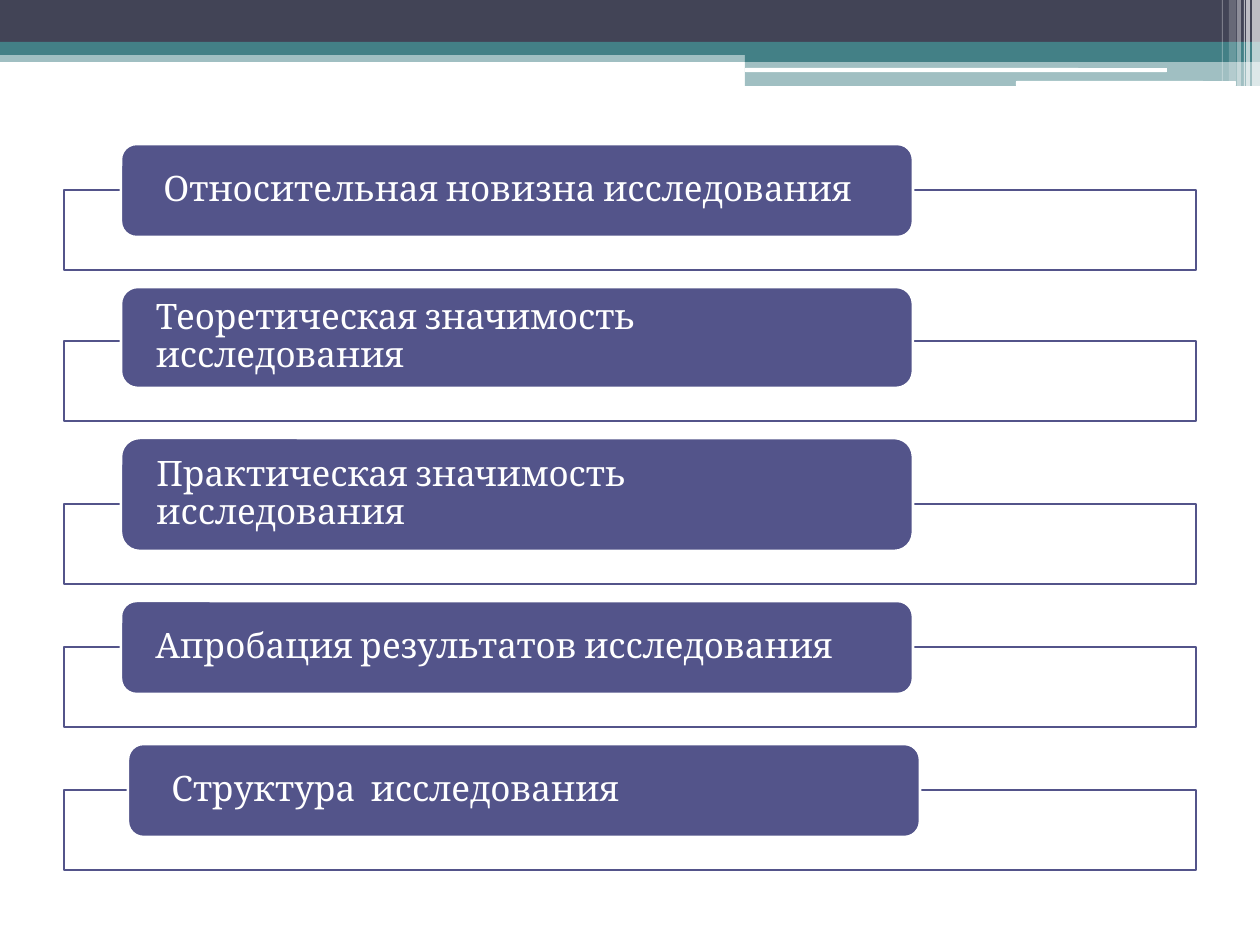
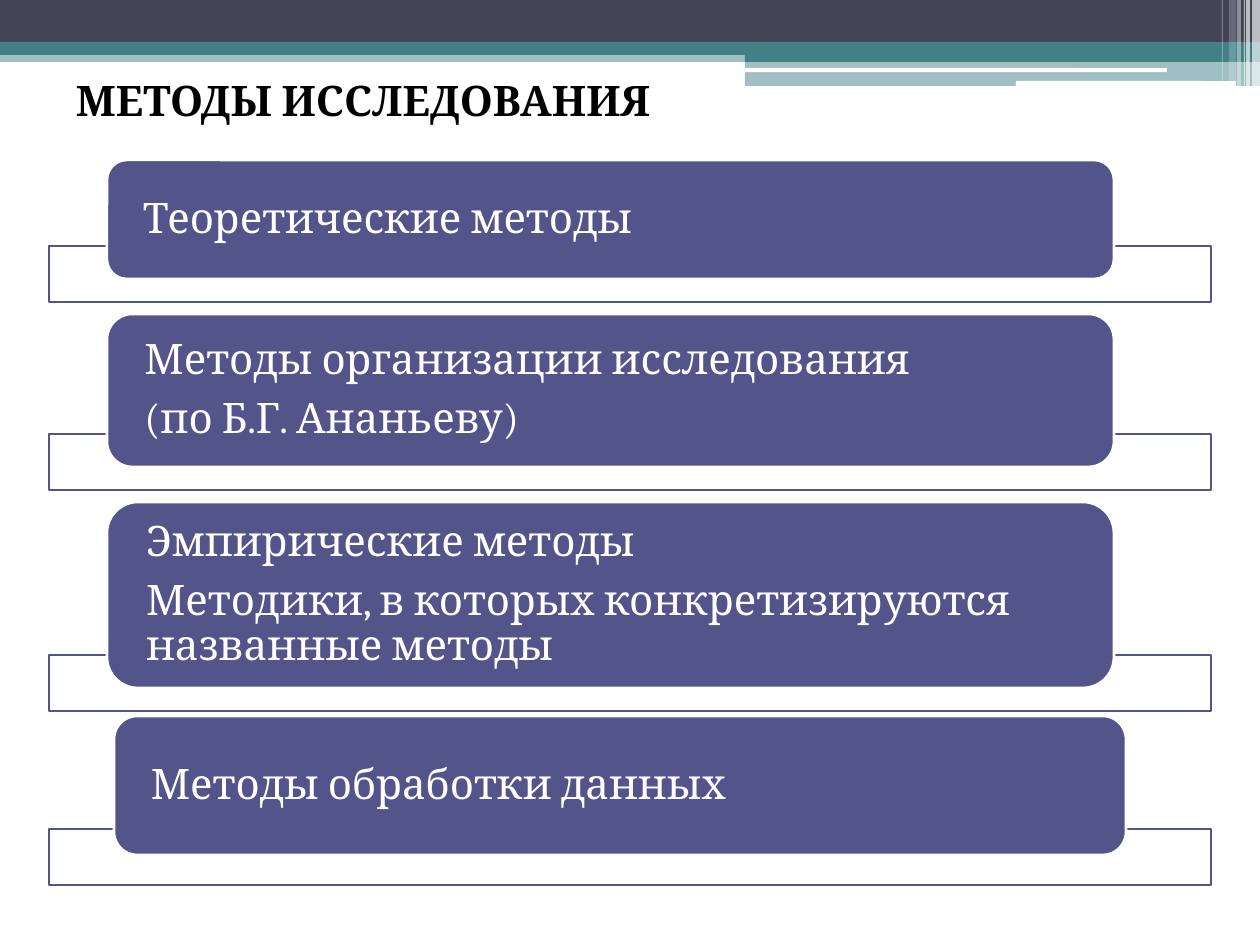
from lxml.etree import SubElement
from pptx import Presentation
from pptx.dml.color import RGBColor
from pptx.enum.shapes import MSO_SHAPE as Form
from pptx.enum.text import MSO_ANCHOR as Anchor, PP_ALIGN as Align
from pptx.oxml.ns import qn
from pptx.util import Emu, Pt

SCALE = 914400 / 126
WHITE, BLACK = "FFFFFF", "000000"
DARK, TEAL, VIOLET = "424456", "438086", "53548A"
BANDS = [
    (0, 50, 1260, 12, TEAL, 50),
    (0, 0, 1260, 43, DARK, 100),
    (0, 42, 1260, 13, TEAL, 100),
    (745, 49, 515, 13, TEAL, 100),
    (745, 61, 515, 25, TEAL, 50),
]
BARS = [(745, 68, 422, 4), (1016, 81, 220, 5)]
STRIPES = [
    (1252, 8, 86, 65),
    (1246, 4, 86, 65),
    (1244, 1, 86, 60),
    (1237, 4, 86, 40),
    (1229, 7, 81, 20),
    (1222, 1, 81, 30),
]


def px(n):
    return Emu(round(n * SCALE))


def color(code):
    return RGBColor.from_string(code)


class Deck:
    font = "Cambria"

    def __init__(self):
        self.prs = Presentation()
        self.prs.slide_width, self.prs.slide_height = px(1260), px(945)
        self.slide = None

    def page(self):
        self.slide = self.prs.slides.add_slide(self.prs.slide_layouts[6])
        for x, y, w, h, fill, alpha in BANDS:
            self.block(x, y, w, h, fill, alpha)
        for bar in BARS:
            self.block(*bar, WHITE, form=Form.ROUNDED_RECTANGLE)
        for x, w, h, alpha in STRIPES:
            self.block(x, 0, w, h, WHITE, alpha)

    def block(self, x, y, w, h, fill, alpha=100, line=None, form=Form.RECTANGLE):
        shape = self.slide.shapes.add_shape(form, px(x), px(y), px(w), px(h))
        shape.shadow.inherit = False
        shape.fill.solid()
        shape.fill.fore_color.rgb = color(fill)
        if alpha < 100:
            tone = shape.element.spPr.find(qn("a:solidFill"))[0]
            SubElement(tone, qn("a:alpha")).set("val", str(alpha * 1000))
        if line:
            shape.line.color.rgb = color(line)
            shape.line.width = Pt(1.5)
        else:
            shape.line.fill.background()
        return shape

    def letter(self, shape, lines, size, ink, pad=0, bold=False):
        frame = shape.text_frame
        frame.word_wrap = True
        frame.margin_left = frame.margin_right = px(pad)
        frame.margin_top = frame.margin_bottom = 0
        for i, line in enumerate(lines):
            para = frame.add_paragraph() if i else frame.paragraphs[0]
            para.text = line
            para.alignment = Align.LEFT
            para.font.name, para.font.size = self.font, Pt(size)
            para.font.bold, para.font.color.rgb = bold, color(ink)
        return frame

    def title(self, text):
        box = self.slide.shapes.add_textbox(px(76), px(75), px(1130), px(60))
        self.letter(box, [text], 24, BLACK, bold=True)

    def label(self, x, y, w, h, lines, size, indent):
        shape = self.block(x, y, w, h, VIOLET, line=WHITE,
                           form=Form.ROUNDED_RECTANGLE)
        frame = self.letter(shape, lines, size, WHITE, pad=30)
        frame.vertical_anchor = Anchor.MIDDLE
        frame.margin_left = px(30 + indent)
        for para in frame.paragraphs:
            para.line_spacing = 0.9
            para.space_after = Pt(size // 3)

    def stack(self, rows, top, left, width, edge, depth, lap, gap, size):
        for high, lines, indent, (dx, dy, dw) in rows:
            base = top + high - lap
            self.block(edge, base, 1260 - 2 * edge, depth, WHITE, 90, VIOLET)
            self.label(left + dx, top + dy, width + dw, high, lines, size, indent)
            top = base + depth + gap


def main():
    deck = Deck()
    still = (0, 0, 0)

    deck.page()
    deck.stack([
        (93, ["Относительная новизна исследования"], 8, still),
        (101, ["Теоретическая значимость исследования"], 0, still),
        (113, ["Практическая значимость исследования"], 0, still),
        (93, ["Апробация результатов исследования"], 0, still),
        (93, ["Структура  исследования"], 9, (7, 0, 0)),
    ], top=144, left=121, width=792, edge=64, depth=80, lap=47, gap=17, size=20)

    deck.page()
    deck.stack([
        (119, ["Теоретические методы"], 0, still),
        (153, ["Методы организации исследования", "(по Б.Г. Ананьеву)"], 0, still),
        (186, ["Эмпирические методы",
               "Методики, в которых конкретизируются названные методы"], 0, still),
        (139, ["Методы обработки данных"], 0, (7, -7, 5)),
    ], top=160, left=107, width=1007, edge=49, depth=56, lap=33, gap=12, size=24)
    deck.title("МЕТОДЫ ИССЛЕДОВАНИЯ")

    deck.prs.save("out.pptx")


if __name__ == "__main__":
    main()
